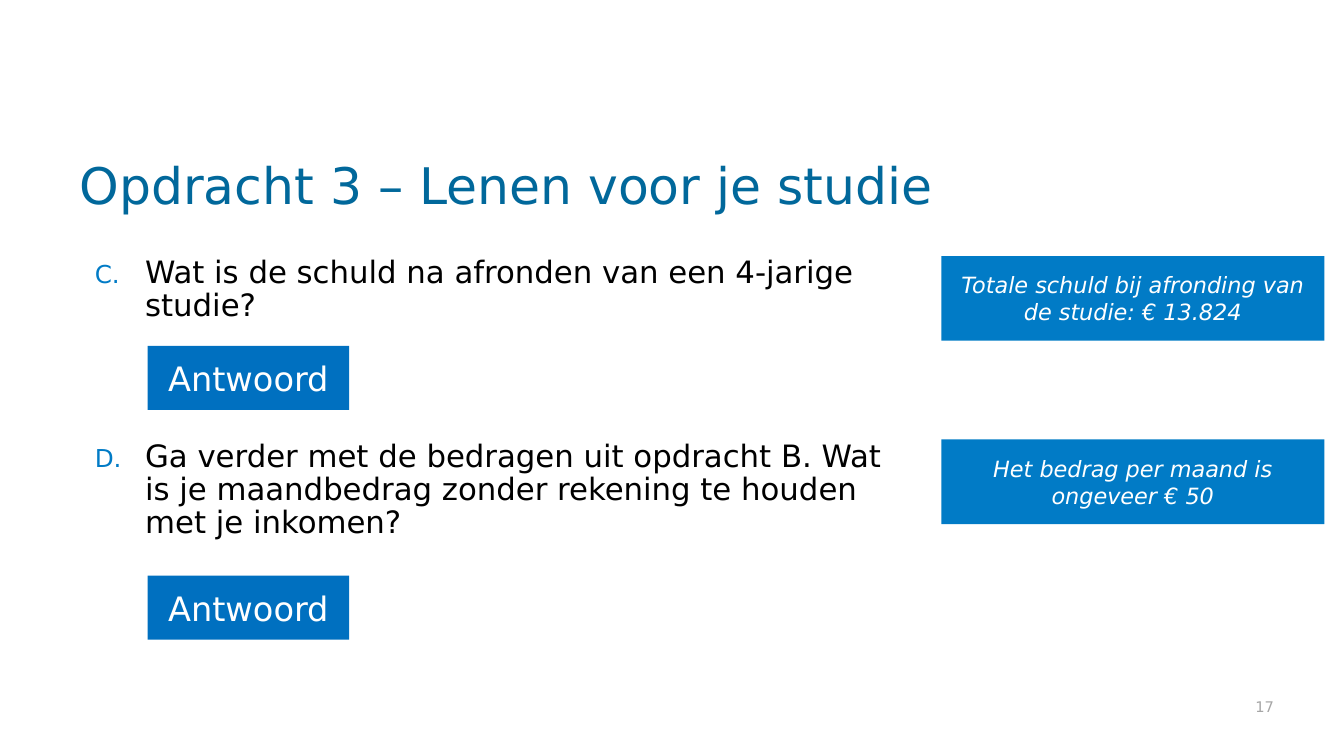
from lxml.etree import SubElement
from pptx import Presentation
from pptx.dml.color import RGBColor
from pptx.enum.shapes import MSO_SHAPE
from pptx.enum.text import MSO_ANCHOR, MSO_AUTO_SIZE, PP_ALIGN
from pptx.oxml.ns import qn
from pptx.util import Pt


def color(value):
    return RGBColor.from_string(value)


class SlideBuilder:
    font_name = "DejaVu Sans"
    title_color = "01689B"
    accent = "017BC6"
    button_fill = "0070C0"

    def __init__(self, slide):
        self.slide = slide

    def place(self, shape, left, top, width, height):
        shape.left, shape.top = Pt(left), Pt(top)
        shape.width, shape.height = Pt(width), Pt(height)

    def format_frame(self, text_frame, anchor):
        text_frame.word_wrap = True
        text_frame.auto_size = MSO_AUTO_SIZE.NONE
        text_frame.vertical_anchor = anchor

    def format_paragraph(self, paragraph, size, text_color, alignment, italic=False):
        paragraph.alignment = alignment
        for run in paragraph.runs:
            run.font.name = self.font_name
            run.font.size = Pt(size)
            run.font.italic = italic
            run.font.color.rgb = color(text_color)

    def number(self, paragraph, start):
        properties = paragraph._p.get_or_add_pPr()
        properties.set("marL", str(Pt(46.8)))
        properties.set("indent", str(-Pt(36)))
        bullet_color = SubElement(properties, qn("a:buClr"))
        SubElement(bullet_color, qn("a:srgbClr"), val=self.accent)
        SubElement(properties, qn("a:buSzPct"), val="80000")
        SubElement(properties, qn("a:buFont"), typeface=self.font_name)
        SubElement(properties, qn("a:buAutoNum"), type="alphaUcPeriod", startAt=str(start))

    def title(self, text, *box):
        shape = self.slide.shapes.title
        self.place(shape, *box)
        self.format_frame(shape.text_frame, MSO_ANCHOR.BOTTOM)
        shape.text_frame.text = text
        paragraph = shape.text_frame.paragraphs[0]
        paragraph.line_spacing = 0.9
        self.format_paragraph(paragraph, 36, self.title_color, PP_ALIGN.LEFT)

    def questions(self, texts, start, gap, *box):
        shape = self.slide.placeholders[1]
        self.place(shape, *box)
        self.format_frame(shape.text_frame, MSO_ANCHOR.TOP)
        shape.text_frame.text = "\n".join(texts)
        for index, paragraph in enumerate(shape.text_frame.paragraphs):
            self.number(paragraph, start)
            paragraph.line_spacing = 0.9
            paragraph.space_before = Pt(gap if index else 0)
            self.format_paragraph(paragraph, 22, "000000", PP_ALIGN.LEFT)

    def box(self, text, fill, size, italic, *box):
        shape = self.slide.shapes.add_shape(MSO_SHAPE.RECTANGLE, *map(Pt, box))
        shape.shadow.inherit = False
        shape.fill.solid()
        shape.fill.fore_color.rgb = color(fill)
        shape.line.fill.background()
        self.format_frame(shape.text_frame, MSO_ANCHOR.MIDDLE)
        shape.text_frame.text = text
        self.format_paragraph(
            shape.text_frame.paragraphs[0], size, "FFFFFF", PP_ALIGN.CENTER, italic
        )

    def button(self, top):
        self.box("Antwoord", self.button_fill, 24, False, 105.4, top, 144, 45.8)

    def answer(self, text, top):
        self.box(text, self.accent, 16, True, 672.4, top, 273.6, 60.5)

    def page_number(self, text, *box):
        shape = self.slide.shapes.add_textbox(*map(Pt, box))
        self.format_frame(shape.text_frame, MSO_ANCHOR.BOTTOM)
        shape.text_frame.margin_right = 0
        shape.text_frame.text = text
        self.format_paragraph(shape.text_frame.paragraphs[0], 10.5, "A6A6A6", PP_ALIGN.RIGHT)


def main():
    presentation = Presentation()
    presentation.slide_width, presentation.slide_height = Pt(960), Pt(540)
    slide = presentation.slides.add_slide(presentation.slide_layouts[1])
    builder = SlideBuilder(slide)
    builder.title("Opdracht 3 – Lenen voor je studie", 49.7, 82.8, 860.4, 74.9)
    builder.questions(
        [
            "Wat is de schuld na afronden van een 4-jarige studie?",
            "Ga verder met de bedragen uit opdracht B. "
            "Wat is je maandbedrag zonder rekening te houden met je inkomen?",
        ],
        3, 83.5, 49.7, 180, 601.9, 309.6,
    )
    for top in (247, 411.1):
        builder.button(top)
    builder.answer("Totale schuld bij afronding van de studie: € 13.824", 182.9)
    builder.answer("Het bedrag per maand is ongeveer € 50", 313.9)
    builder.page_number("17", 516.2, 489.6, 393.8, 25.2)
    presentation.save("out.pptx")


if __name__ == "__main__":
    main()
